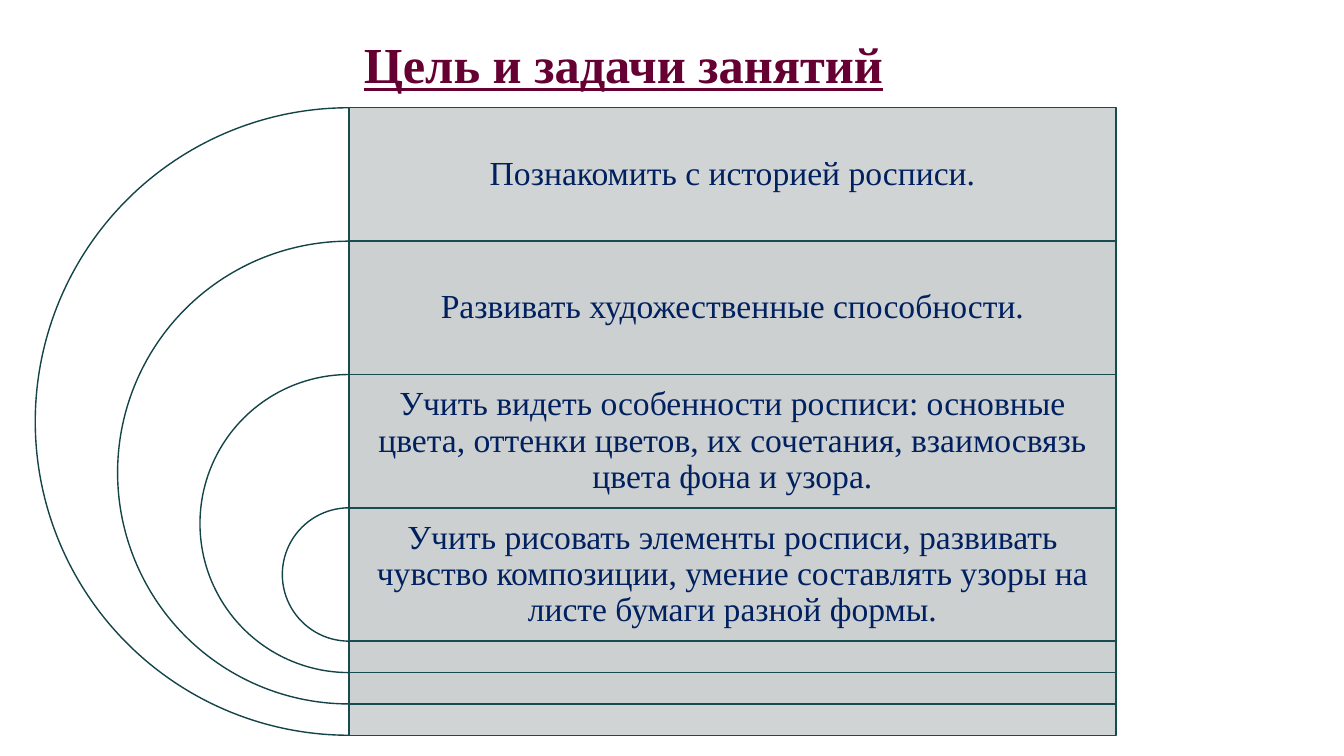
from dataclasses import dataclass

from lxml import etree
from pptx import Presentation
from pptx import util as u
from pptx.dml.color import RGBColor
from pptx.enum import shapes, text
from pptx.oxml.ns import qn


@dataclass(frozen=True)
class Theme:
    font: str = "Times New Roman"
    title_color: RGBColor = RGBColor.from_string("660033")
    text_color: RGBColor = RGBColor.from_string("002060")
    pie_fill: RGBColor = RGBColor.from_string("FFFFFF")
    pie_line: RGBColor = RGBColor.from_string("144448")
    band_fill: RGBColor = RGBColor.from_string("CCD0D0")
    band_line: RGBColor = RGBColor.from_string("164B4F")
    band_opacity: int = 90000
    title_size: float = 36
    text_size: float = 24
    line_width: float = 1


@dataclass(frozen=True)
class Ring:
    caption: str
    top: float
    diameter: float


THEME = Theme()
AXIS_X = 249.3
BAND_WIDTH = 547.8
FIRST_TOP = 77
ROW_HEIGHT = 95.25
FOOT_HEIGHT = 22.4
INSET = 7.2
GOALS = [
    "Познакомить с историей росписи.",
    "Развивать художественные способности.",
    "Учить видеть особенности росписи: основные цвета, оттенки цветов, "
    "их сочетания, взаимосвязь цвета фона и узора.",
    "Учить рисовать элементы росписи, развивать чувство композиции, "
    "умение составлять узоры на листе бумаги разной формы.",
]
RINGS = [
    Ring(goal, FIRST_TOP + i * ROW_HEIGHT,
         ROW_HEIGHT + (len(GOALS) - 1 - i) * (ROW_HEIGHT + FOOT_HEIGHT))
    for i, goal in enumerate(GOALS)
]


def add_span(para, words: str, size: float, color: RGBColor):
    para.alignment = text.PP_ALIGN.CENTER
    span = para.add_run()
    span.text = words
    span.font.name = THEME.font
    span.font.size = u.Pt(size)
    span.font.color.rgb = color
    return span


def add_title(page, words: str) -> None:
    title = page.shapes.title
    title.left, title.top = u.Pt(250.6), u.Pt(20.2)
    title.width, title.height = u.Pt(389.5), u.Pt(51.1)
    frame = title.text_frame
    frame.word_wrap = False
    frame.auto_size = text.MSO_AUTO_SIZE.SHAPE_TO_FIT_TEXT
    frame.vertical_anchor = text.MSO_ANCHOR.TOP
    span = add_span(frame.paragraphs[0], words, THEME.title_size, THEME.title_color)
    span.font.bold = True
    span.font.underline = True


def add_outlined(page, kind, left: float, top: float, width: float,
                 height: float, fill: RGBColor, line: RGBColor):
    shape = page.shapes.add_shape(
        kind, u.Pt(left), u.Pt(top), u.Pt(width), u.Pt(height))
    shape.shadow.inherit = False
    shape.fill.solid()
    shape.fill.fore_color.rgb = fill
    shape.line.color.rgb = line
    shape.line.width = u.Pt(THEME.line_width)
    return shape


def add_caption(page, ring: Ring) -> None:
    box = page.shapes.add_textbox(
        u.Pt(AXIS_X), u.Pt(ring.top), u.Pt(BAND_WIDTH), u.Pt(ROW_HEIGHT))
    frame = box.text_frame
    frame.word_wrap = True
    frame.vertical_anchor = text.MSO_ANCHOR.MIDDLE
    frame.margin_left = frame.margin_right = u.Pt(INSET)
    frame.margin_top = frame.margin_bottom = u.Pt(INSET)
    para = frame.paragraphs[0]
    para.line_spacing = 0.9
    add_span(para, ring.caption, THEME.text_size, THEME.text_color)


def add_ring(page, ring: Ring) -> None:
    pie = add_outlined(
        page, shapes.MSO_SHAPE.PIE, AXIS_X - ring.diameter / 2, ring.top,
        ring.diameter, ring.diameter, THEME.pie_fill, THEME.pie_line)
    pie.adjustments[0] = 54
    pie.adjustments[1] = 162
    band = add_outlined(
        page, shapes.MSO_SHAPE.RECTANGLE, AXIS_X, ring.top,
        BAND_WIDTH, ring.diameter, THEME.band_fill, THEME.band_line)
    color = band.fill._xPr.find(qn("a:solidFill")).find(qn("a:srgbClr"))
    etree.SubElement(color, qn("a:alpha")).set("val", str(THEME.band_opacity))
    add_caption(page, ring)


def main() -> None:
    deck = Presentation()
    deck.slide_width, deck.slide_height = u.Pt(960), u.Pt(540)
    page = deck.slides.add_slide(deck.slide_layouts[5])
    add_title(page, "Цель и задачи занятий")
    for ring in RINGS:
        add_ring(page, ring)
    deck.save("out.pptx")


if __name__ == "__main__":
    main()
